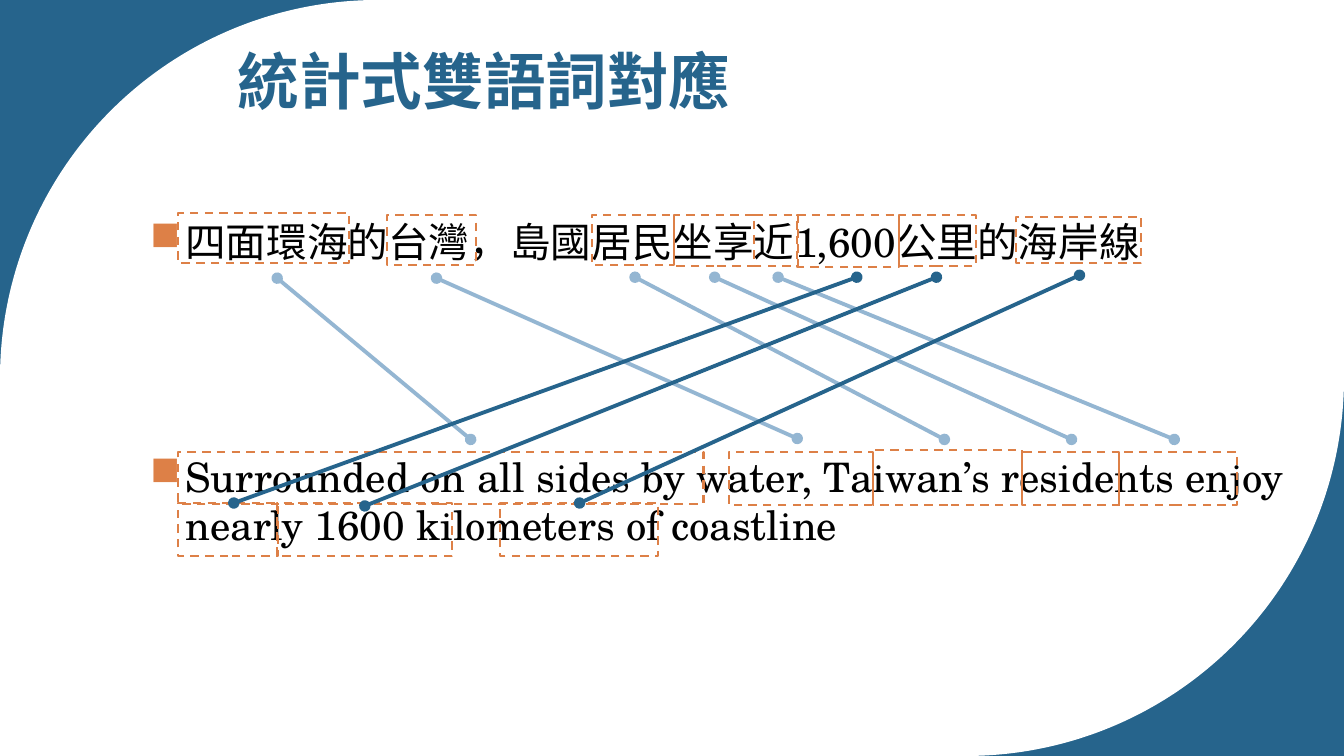
from lxml import etree
from pptx import Presentation
from pptx.dml.color import RGBColor
from pptx.enum.dml import MSO_LINE
from pptx.enum.shapes import MSO_CONNECTOR, MSO_SHAPE
from pptx.enum.text import MSO_ANCHOR
from pptx.oxml.ns import qn
from pptx.util import Pt

DASH = MSO_LINE.DASH
STRAIGHT = MSO_CONNECTOR.STRAIGHT
RECTANGLE = MSO_SHAPE.RECTANGLE
LEAF = MSO_SHAPE.ROUND_2_DIAG_RECTANGLE
MIDDLE = MSO_ANCHOR.MIDDLE

COLORS = {
    "blue": "26648C",
    "pale": "94B6D2",
    "orange": "DD8047",
    "white": "FFFFFF",
    "black": "000000",
}
FONT = "TeX Gyre Schola"
WIDTH, HEIGHT = 960, 540
INDENT = 25.2
TITLE = "統計式雙語詞對應"
# Each sentence comes with the space above it
SENTENCES = [
    ("四面環海的台灣，島國居民坐享近1,600公里的海岸線", 0),
    ("Surrounded on all sides by water, Taiwan’s residents enjoy "
     "nearly 1600 kilometers of coastline", 133),
]
# Chinese word frame, English word frame, link start, link end, link colour
ALIGNMENTS = [
    ((127.4, 151.9, 121.7, 36), (127.4, 322.6, 375.1, 37.4),
     (198, 198.7), (336.2, 313.9), "pale"),
    ((276.5, 153.4, 63.4, 36), (520.6, 322.6, 103, 38.2),
     (311.8, 198.7), (569.5, 313.2), "pale"),
    ((422.6, 153.4, 59, 36), (623.5, 321.1, 106.6, 39.6),
     (453.6, 198), (674.6, 313.9), "pale"),
    ((481.7, 153.4, 56.9, 36.7), (730.1, 322.6, 69.1, 38.2),
     (510.5, 198), (765.4, 313.9), "pale"),
    ((538.6, 153.4, 31.7, 36.7), (799.2, 322.6, 84.2, 38.2),
     (555.8, 198), (838.8, 313.9), "pale"),
    ((569.5, 153.4, 72.7, 37.4), (127.4, 359.3, 71.3, 38.2),
     (612, 198), (167, 359.3), "blue"),
    ((642.2, 153.4, 54.7, 36.7), (198, 359.3, 124.6, 38.2),
     (668.9, 198), (260.6, 361.4), "blue"),
    ((725.8, 154.8, 89.3, 33.1), (357.1, 359.3, 113, 38.2),
     (771.1, 196.6), (414, 359.3), "blue"),
]


def rgb(name):
    return RGBColor.from_string(COLORS[name])


def add_panel(slide, preset, color):
    """Add a borderless shape that covers the slide."""
    panel = slide.shapes.add_shape(preset, 0, 0, Pt(WIDTH), Pt(HEIGHT))
    panel.shadow.inherit = False
    panel.fill.solid()
    panel.fill.fore_color.rgb = rgb(color)
    panel.line.fill.background()
    return panel


def add_text_frame(slide, left, top, width, height):
    frame = slide.shapes.add_textbox(Pt(left), Pt(top), Pt(width), Pt(height)).text_frame
    frame.word_wrap = True
    return frame


def add_run(paragraph, text, size, color, bold=False):
    run = paragraph.add_run()
    run.text = text
    run.font.name = FONT
    run.font.size = Pt(size)
    run.font.bold = bold
    run.font.color.rgb = rgb(color)


def add_bullet(paragraph):
    """Give the paragraph a hanging orange square."""
    properties = paragraph._p.get_or_add_pPr()
    properties.set("marL", str(Pt(INDENT)))
    properties.set("indent", str(-Pt(INDENT)))
    bullet_color = etree.SubElement(properties, qn("a:buClr"))
    etree.SubElement(bullet_color, qn("a:srgbClr"), val=COLORS["orange"])
    etree.SubElement(properties, qn("a:buChar"), char="■")


def add_word_frame(slide, left, top, width, height):
    frame = slide.shapes.add_shape(RECTANGLE, Pt(left), Pt(top), Pt(width), Pt(height))
    frame.shadow.inherit = False
    frame.fill.background()
    frame.line.color.rgb = rgb("orange")
    frame.line.width = Pt(1.5)
    frame.line.dash_style = DASH


def add_link(slide, start, end, color):
    """Add a line with a dot at both ends."""
    link = slide.shapes.add_connector(STRAIGHT, *map(Pt, start + end))
    link.line.color.rgb = rgb(color)
    link.line.width = Pt(2.75)
    outline = link.line._get_or_add_ln()
    for tag in ("a:headEnd", "a:tailEnd"):
        etree.SubElement(outline, qn(tag), type="oval")
    etree.SubElement(link._element.spPr, qn("a:effectLst"))


def add_title(slide):
    frame = add_text_frame(slide, 162.7, 18, 758.2, 77.8)
    frame.vertical_anchor = MIDDLE
    add_run(frame.paragraphs[0], TITLE, 44, "blue", bold=True)


def add_sentences(slide):
    frame = add_text_frame(slide, 100.1, 151.2, 856.1, 354.2)
    for index, (sentence, space_above) in enumerate(SENTENCES):
        paragraph = frame.add_paragraph() if index else frame.paragraphs[0]
        paragraph.space_before = Pt(space_above)
        add_bullet(paragraph)
        add_run(paragraph, sentence, 29, "black")


def main():
    deck = Presentation()
    deck.slide_width, deck.slide_height = Pt(WIDTH), Pt(HEIGHT)
    slide = deck.slides.add_slide(deck.slide_layouts[6])
    add_panel(slide, RECTANGLE, "blue")
    leaf = add_panel(slide, LEAF, "white")
    leaf.adjustments[0], leaf.adjustments[1] = 0.5, 0
    add_title(slide)
    add_sentences(slide)
    for chinese, english, start, end, color in ALIGNMENTS:
        add_word_frame(slide, *chinese)
        add_word_frame(slide, *english)
        add_link(slide, start, end, color)
    deck.save("out.pptx")


if __name__ == "__main__":
    main()
